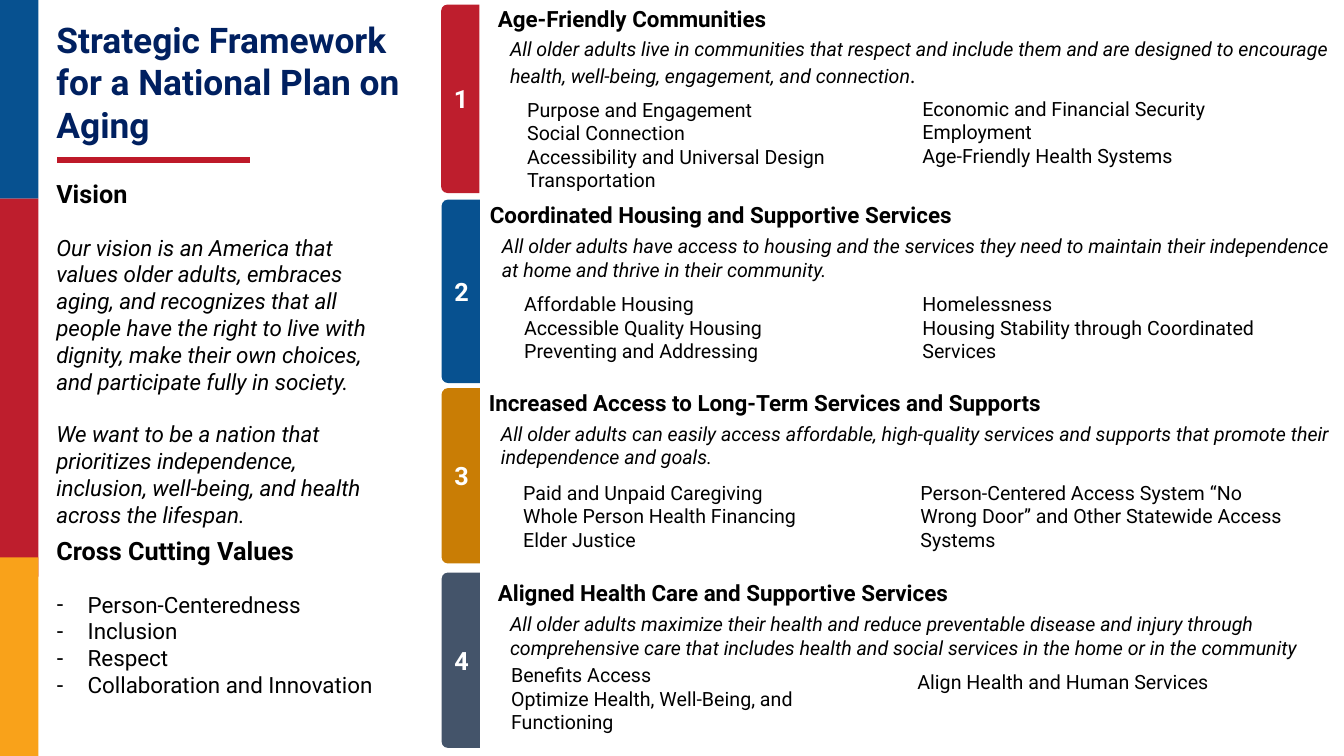
from lxml.etree import SubElement
from pptx import Presentation
from pptx.dml.color import RGBColor as RGB
from pptx.enum.shapes import MSO_CONNECTOR as LINK, MSO_SHAPE as SHAPE
from pptx.enum.text import MSO_ANCHOR as ANCHOR, PP_ALIGN as ALIGN
from pptx.oxml.ns import qn
from pptx.util import Pt

PX = 9144  # EMU in one px, 100 px to the inch
FONT = "Roboto"
BLACK = RGB(0x00, 0x00, 0x00)
WHITE = RGB(0xFF, 0xFF, 0xFF)
NAVY = RGB(0x00, 0x20, 0x60)
BLUE = RGB(0x07, 0x51, 0x90)
RED = RGB(0xBE, 0x1E, 0x2D)
RULE = RGB(0xBE, 0x19, 0x29)
GOLD = RGB(0xF9, 0xA2, 0x1A)
OCHRE = RGB(0xC9, 0x7D, 0x05)
SLATE = RGB(0x44, 0x54, 0x6A)


def put(frame, text, size=14, color=BLACK, bold=False, ital=False,
        after=0, align=ALIGN.LEFT, left=0, hang=0, mark=None):
    """Add one paragraph to a frame and return it."""
    para = frame.paragraphs[0]
    if para.runs:
        para = frame.add_paragraph()
    para.alignment = align
    para.space_before, para.space_after = Pt(0), Pt(after)
    props = para._p.get_or_add_pPr()
    props.set("marL", str(left * PX))
    props.set("indent", str(-hang * PX))
    if mark:
        SubElement(props, qn("a:buChar")).set("char", mark)
    else:
        SubElement(props, qn("a:buNone"))
    add(para, text, size, color, bold, ital)
    return para


def add(para, text, size, color=BLACK, bold=False, ital=False):
    run = para.add_run()
    run.text = text
    font = run.font
    font.name, font.size, font.bold, font.italic = FONT, Pt(size), bold, ital
    font.color.rgb = color


class Deck:
    def __init__(self, wide, high):
        self.show = Presentation()
        self.show.slide_width, self.show.slide_height = wide * PX, high * PX
        self.slide = self.show.slides.add_slide(self.show.slide_layouts[1])
        self.shapes = self.slide.shapes

    def block(self, kind, x, y, w, h, fill):
        shape = self.shapes.add_shape(kind, x * PX, y * PX, w * PX, h * PX)
        shape.shadow.inherit = False
        shape.fill.solid()
        shape.fill.fore_color.rgb = fill
        shape.line.fill.background()
        return shape

    def tab(self, label, y, h, fill, x=438, w=38):
        """Upright tab with rounded left corners: a turned shape."""
        shape = self.block(SHAPE.ROUND_2_SAME_RECTANGLE,
                           x + (w - h) // 2, y + (h - w) // 2, h, w, fill)
        shape.rotation = 270
        frame = shape.text_frame
        frame.vertical_anchor = ANCHOR.MIDDLE
        frame._txBody.bodyPr.set("vert", "vert")
        put(frame, label, 18, WHITE, bold=True, align=ALIGN.CENTER)

    def rule(self, x, y, w, color, thick):
        line = self.shapes.add_connector(
            LINK.STRAIGHT, x * PX, y * PX, (x + w) * PX, y * PX)
        line.line.color.rgb = color
        line.line.width = Pt(thick)
        SubElement(line._element.spPr, qn("a:effectLst"))

    def box(self, x, y, w, h):
        shape = self.shapes.add_textbox(x * PX, y * PX, w * PX, h * PX)
        shape.text_frame.word_wrap = True
        return shape.text_frame

    def holder(self, index, x, y, w, h):
        shape = self.slide.placeholders[index]
        shape.left, shape.top = x * PX, y * PX
        shape.width, shape.height = w * PX, h * PX
        frame = shape.text_frame
        frame.word_wrap = True
        frame.vertical_anchor = ANCHOR.TOP
        return frame

    def list(self, x, y, w, h, items):
        frame = self.box(x, y, w, h)
        for item in items:
            put(frame, item)


# Goals: tab (top, height, fill), head (left, top, width), text, two lists
GOALS = [
    ((5, 187, RED), (484, 0, 850), "Age-Friendly Communities",
     "All older adults live in communities that respect and include them and "
     "are designed to encourage health, well-being, engagement, and connection",
     (513, 92, ["Purpose and Engagement", "Social Connection",
                "Accessibility and Universal Design", "Transportation"]),
     (905, 91, ["Economic and Financial Security", "Employment",
                "Age-Friendly Health Systems"])),
    ((198, 182, BLUE), (476, 195, 857),
     "Coordinated Housing and Supportive Services",
     "All older adults have access to housing and the services they need to "
     "maintain their independence at home and thrive in their community.",
     (510, 285, ["Affordable Housing", "Accessible Quality Housing",
                 "Preventing and Addressing"]),
     (905, 285, ["Homelessness",
                 "Housing Stability through Coordinated Services"])),
    ((385, 174, OCHRE), (475, 381, 857),
     "Increased Access to Long-Term Services and Supports",
     "All older adults can easily access affordable, high-quality services and "
     "supports that promote their independence and goals.",
     (509, 472, ["Paid and Unpaid Caregiving", "Whole Person Health Financing",
                 "Elder Justice"]),
     (903, 472, ["Person-Centered Access System “No Wrong Door” and Other "
                 "Statewide Access Systems"])),
    ((568, 174, SLATE), (484, 570, 857),
     "Aligned Health Care and Supportive Services",
     "All older adults maximize their health and reduce preventable disease and "
     "injury through comprehensive care that includes health and social "
     "services in the home or in the community",
     (497, 653, ["Benefits Access",
                 "Optimize Health, Well-Being, and Functioning"]),
     (900, 660, ["Align Health and Human Services"])),
]
VISION = [
    "Our vision is an America that values older adults, embraces aging, and "
    "recognizes that all people have the right to live with dignity, make "
    "their own choices, and participate fully in society.",
    "We want to be a nation that prioritizes independence, inclusion, "
    "well-being, and health across the lifespan.",
]
VALUES = ["Person-Centeredness", "Inclusion", "Respect",
          "Collaboration and Innovation"]


def main():
    deck = Deck(1333, 750)

    # Colour strip at the left edge
    for y, h, fill in [(0, 197, BLUE), (197, 375, RED), (553, 197, GOLD)]:
        deck.block(SHAPE.RECTANGLE, 0, y, 38, h, fill)

    # Title and rule
    put(deck.holder(0, 46, 13, 384, 104),
        "Strategic Framework for a National Plan on Aging", 25.2, NAVY, bold=True)
    deck.rule(57, 159, 191, RULE, 4.5)

    # Vision
    frame = deck.box(46, 172, 352, 357)
    put(frame, "Vision", 18, bold=True, after=18)
    for text in VISION:
        put(frame, text, 16, ital=True, after=18)

    # Values
    frame = deck.holder(1, 46, 526, 423, 177)
    put(frame, "Cross Cutting Values", 18, bold=True, after=18)
    for text in VALUES:
        put(frame, text, 16, left=31, hang=31, mark="-")

    # Goals
    for count, (tab, head, name, text, *lists) in enumerate(GOALS, 1):
        deck.tab(str(count), *tab)
        frame = deck.box(*head, 90)
        put(frame, name, 16, bold=True, after=4)
        para = put(frame, text, ital=True, left=12)
        if count == 1:
            add(para, ".", 16, ital=True)
        for (x, y, items), w in zip(lists, (381, 392)):
            deck.list(x, y, w, 81, items)

    deck.show.save("out.pptx")


if __name__ == "__main__":
    main()
